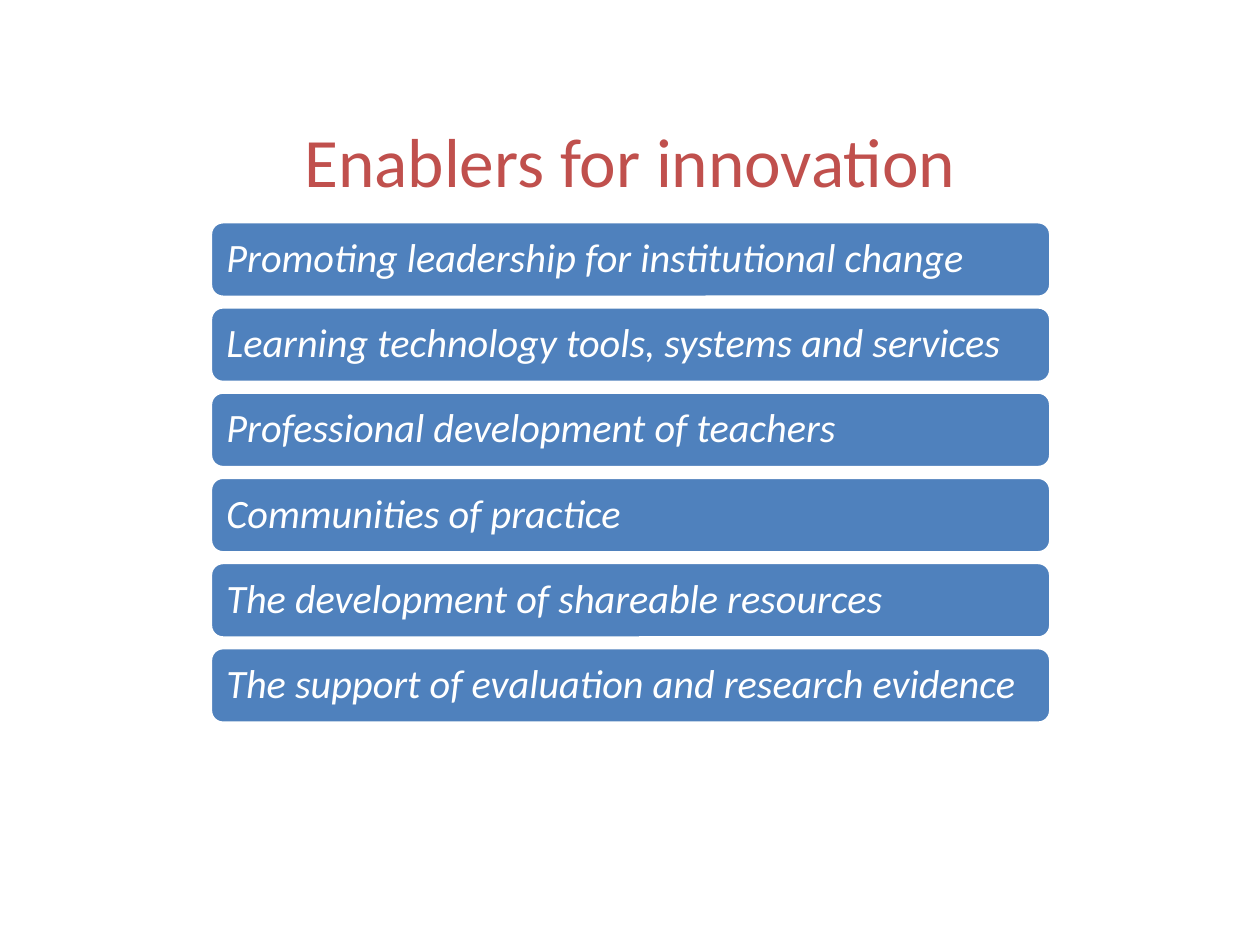
from dataclasses import dataclass

from pptx import Presentation
from pptx.dml.color import RGBColor
from pptx.enum.shapes import MSO_SHAPE
from pptx.enum.text import MSO_ANCHOR, PP_ALIGN
from pptx.util import Inches, Pt

ROUND = MSO_SHAPE.ROUNDED_RECTANGLE
MIDDLE, BOTTOM = MSO_ANCHOR.MIDDLE, MSO_ANCHOR.BOTTOM
LEFT, CENTER = PP_ALIGN.LEFT, PP_ALIGN.CENTER
RED = RGBColor(0xC0, 0x50, 0x4D)
BLUE = RGBColor(0x4F, 0x81, 0xBD)
WHITE = RGBColor(0xFF, 0xFF, 0xFF)

FIRST, LAST = 1.76, 5.14
LABELS = (
    "Promoting leadership for institutional change",
    "Learning technology tools, systems and services",
    "Professional development of teachers",
    "Communities of practice",
    "The development of shareable resources",
    "The support of evaluation and research evidence",
)


@dataclass(frozen=True)
class Style:
    size: float
    color: RGBColor
    italic: bool
    align: PP_ALIGN
    anchor: MSO_ANCHOR
    inset: float
    spacing: float


@dataclass(frozen=True)
class Bar:
    label: str
    top: float


TITLE = Style(39.6, RED, False, CENTER, BOTTOM, 0, 1)
ITEM = Style(23, WHITE, True, LEFT, MIDDLE, 0.1, 0.9)


def write(shape, text: str, style: Style) -> None:
    frame = shape.text_frame
    inset = Inches(style.inset)
    layout = {
        "word_wrap": True,
        "vertical_anchor": style.anchor,
        "margin_left": inset,
        "margin_top": inset,
        "margin_right": inset,
        "margin_bottom": inset,
    }
    for name, value in layout.items():
        setattr(frame, name, value)
    para = frame.paragraphs[0]
    para.alignment = style.align
    para.line_spacing = style.spacing
    run = para.add_run()
    run.text = text
    face = {"name": "Calibri", "size": Pt(style.size), "italic": style.italic}
    for name, value in face.items():
        setattr(run.font, name, value)
    run.font.color.rgb = style.color


def draw_bar(slide, bar: Bar) -> None:
    shape = slide.shapes.add_shape(
        ROUND, Inches(1.67), Inches(bar.top), Inches(6.67), Inches(0.6)
    )
    shape.shadow.inherit = False
    shape.fill.solid()
    shape.fill.fore_color.rgb = BLUE
    shape.line.color.rgb = WHITE
    shape.line.width = Pt(2)
    write(shape, bar.label, ITEM)


def main() -> None:
    deck = Presentation()
    deck.slide_width, deck.slide_height = Inches(10), Inches(7.5)
    slide = deck.slides.add_slide(deck.slide_layouts[6])
    title = slide.shapes.add_textbox(
        Inches(0.5), Inches(0.3), Inches(9), Inches(1.3)
    )
    write(title, "Enablers for innovation", TITLE)
    step = (LAST - FIRST) / (len(LABELS) - 1)
    for row, label in enumerate(LABELS):
        draw_bar(slide, Bar(label, FIRST + row * step))
    deck.save("out.pptx")


if __name__ == "__main__":
    main()
